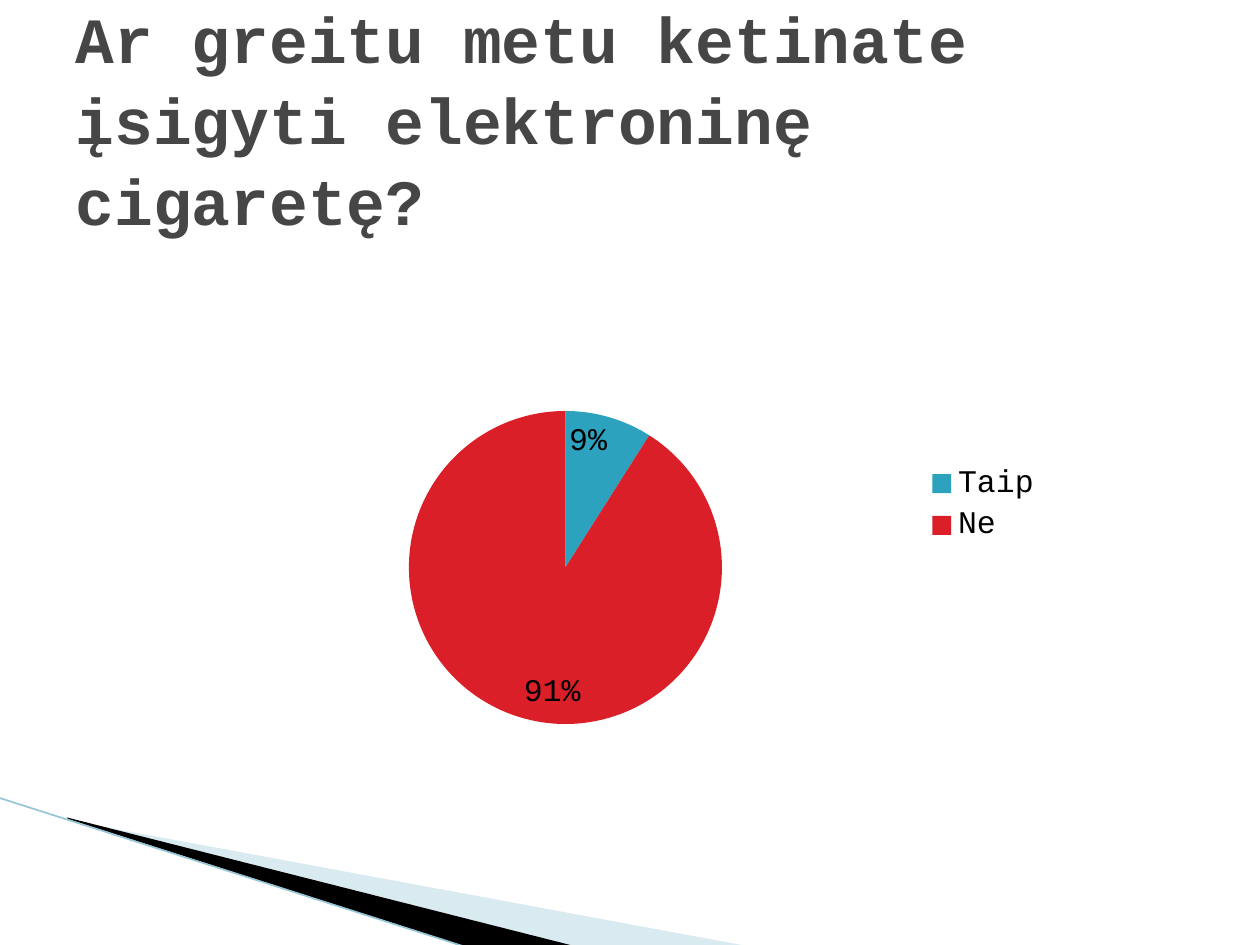
from dataclasses import dataclass

from lxml.etree import SubElement
from pptx import Presentation
from pptx.chart.data import CategoryChartData
from pptx.dml.color import RGBColor
from pptx.enum.chart import XL_CHART_TYPE as ChartType
from pptx.enum.chart import XL_LABEL_POSITION as LabelPosition
from pptx.enum.chart import XL_LEGEND_POSITION as LegendPosition
from pptx.enum.shapes import MSO_CONNECTOR as Connector
from pptx.enum.text import MSO_ANCHOR as Anchor
from pptx.enum.text import MSO_AUTO_SIZE as AutoSize
from pptx.enum.text import PP_ALIGN as Align
from pptx.oxml import parse_xml
from pptx.oxml.ns import nsdecls, qn
from pptx.util import Cm, Pt


@dataclass(frozen=True)
class Theme:
    font: str = "Courier New"
    title_size: float = 36.9
    chart_size: float = 18
    title: RGBColor = RGBColor(0x46, 0x46, 0x46)
    black: RGBColor = RGBColor(0, 0, 0)
    yes: RGBColor = RGBColor(0x2D, 0xA2, 0xBF)
    no: RGBColor = RGBColor(0xDA, 0x1F, 0x28)
    wedge: RGBColor = RGBColor(0xA0, 0xCB, 0xDC)
    edge: RGBColor = RGBColor(0x97, 0xC5, 0xD8)


THEME = Theme()


def style_font(font, size, color, bold=False):
    font.name = THEME.font
    font.size = Pt(size)
    font.color.rgb = color
    font.bold = bold


def add_wedge(slide, points, color, opacity=100):
    """Draw a filled polygon through points given in centimetres."""
    start, *others = [(Cm(x), Cm(y)) for x, y in points]
    builder = slide.shapes.build_freeform(*start)
    builder.add_line_segments(others, close=True)
    shape = builder.convert_to_shape()
    shape.shadow.inherit = False
    shape.line.fill.background()
    shape.fill.solid()
    shape.fill.fore_color.rgb = color
    if opacity < 100:
        fill_color = shape.fill._xPr.find(".//" + qn("a:srgbClr"))
        SubElement(fill_color, qn("a:alpha"), val=str(opacity * 1000))


def add_edge(slide, start, end):
    line = slide.shapes.add_connector(
        Connector.STRAIGHT, *(Cm(value) for value in start + end))
    line.line.color.rgb = THEME.edge
    line.line.width = Pt(0.95)
    SubElement(line._element.spPr, qn("a:effectLst"))


def place_plot(chart, **fractions):
    """Fix the inner plot area, as fractions of the chart frame."""
    values = "".join(f'<c:{name} val="{value}"/>'
                     for name, value in fractions.items())
    layout = parse_xml(
        f'<c:layout {nsdecls("c")}><c:manualLayout><c:layoutTarget val="inner"/>'
        f'<c:xMode val="edge"/><c:yMode val="edge"/>{values}'
        '</c:manualLayout></c:layout>')
    plot_area = chart._chartSpace.find(".//" + qn("c:plotArea"))
    for existing in plot_area.findall(qn("c:layout")):
        plot_area.remove(existing)
    plot_area.insert(0, layout)


def add_answer_pie(slide):
    data = CategoryChartData()
    data.categories = ["Taip", "Ne"]
    data.add_series("Series 1", (9, 91))
    chart = slide.shapes.add_chart(
        ChartType.PIE, Cm(4.11), Cm(5.46), Cm(17.15), Cm(9.42), data).chart
    style_font(chart.font, THEME.chart_size, THEME.black)
    chart.has_title = False
    chart.has_legend = True
    chart.legend.position = LegendPosition.RIGHT
    chart.legend.include_in_layout = False
    place_plot(chart, x=0.24, y=0.3, w=0.37, h=0.67)

    plot = chart.plots[0]
    plot.vary_by_categories = True
    for index, color in enumerate((THEME.yes, THEME.no)):
        slice_format = plot.series[0].points[index].format
        slice_format.fill.solid()
        slice_format.fill.fore_color.rgb = color
        slice_format.line.fill.background()

    plot.has_data_labels = True
    labels = plot.data_labels
    labels.show_percentage = True
    labels.show_value = False
    labels.number_format = "0%"
    labels.number_format_is_linked = False
    labels.position = LabelPosition.INSIDE_END
    style_font(labels.font, THEME.chart_size, THEME.black)


def set_title(slide, text):
    title = slide.shapes.title
    title.left, title.top = Cm(1.27), Cm(0.76)
    title.width, title.height = Cm(22.86), Cm(3.18)
    frame = title.text_frame
    frame.text = text
    frame.word_wrap = True
    frame.auto_size = AutoSize.NONE
    frame.vertical_anchor = Anchor.MIDDLE
    paragraph = frame.paragraphs[0]
    paragraph.alignment = Align.LEFT
    paragraph.line_spacing = 1.05
    style_font(paragraph.font, THEME.title_size, THEME.title, bold=True)


def main():
    presentation = Presentation()
    presentation.slide_width, presentation.slide_height = Cm(25.4), Cm(19.05)
    slide = presentation.slides.add_slide(presentation.slide_layouts[5])

    add_wedge(slide, [(1.4, 16.54), (15.11, 19.08), (11.58, 19.08), (1.4, 16.51)],
              THEME.wedge, opacity=40)
    add_wedge(slide, [(1.35, 16.48), (11.61, 19.08), (9.45, 19.1), (1.37, 16.51)],
              THEME.black)
    add_edge(slide, (-0.03, 16.08), (9.42, 19.1))
    add_answer_pie(slide)
    set_title(slide, "Ar greitu metu ketinate įsigyti elektroninę cigaretę?")

    presentation.save("out.pptx")


if __name__ == "__main__":
    main()
